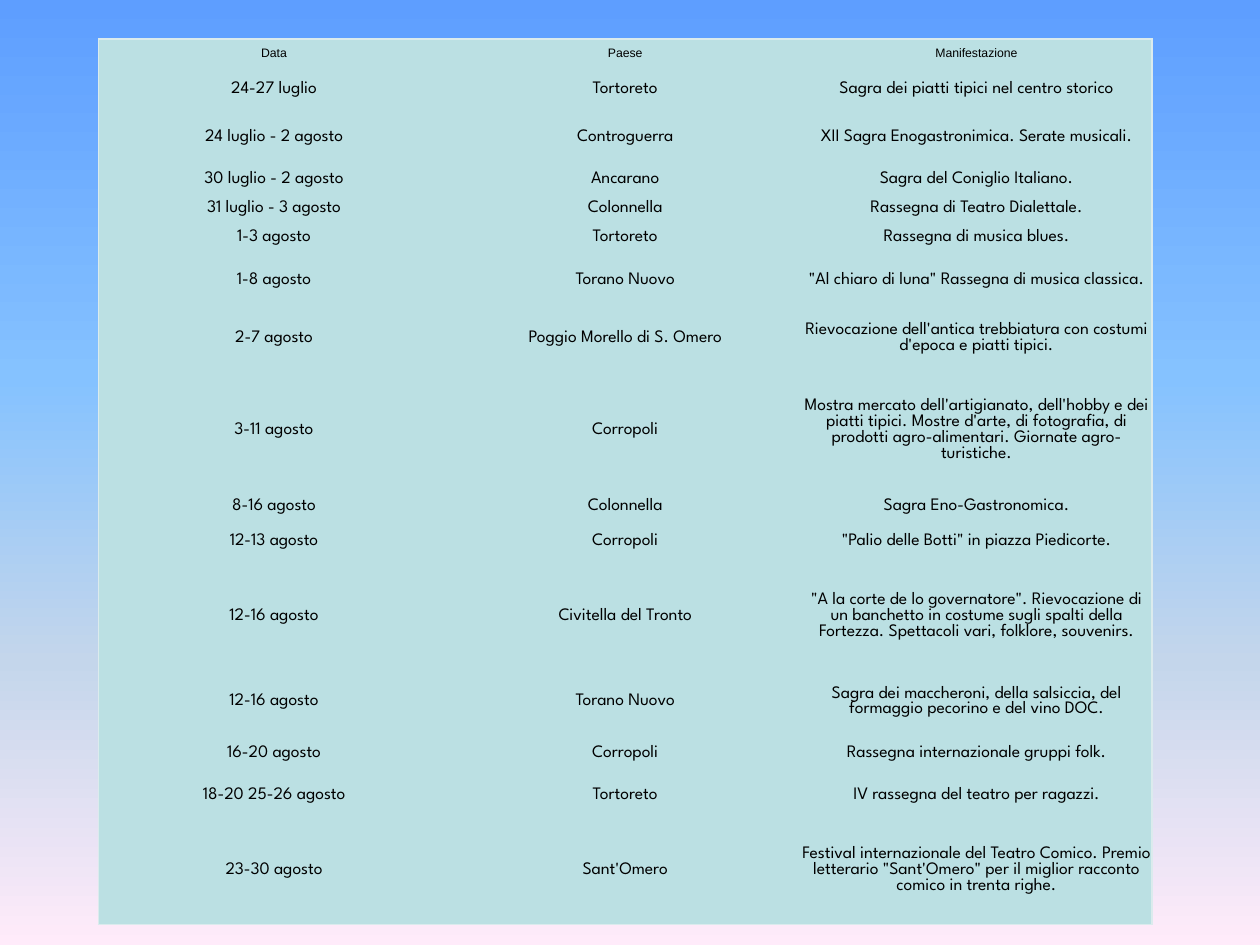
from typing import NamedTuple

import copy
import lxml.etree
import pptx
import pptx.dml.color
import pptx.enum.text
import pptx.oxml.ns
import pptx.table
import pptx.util

qn = pptx.oxml.ns.qn

NO_GRID_STYLE = "{2D5ABB26-0587-4C30-8999-92F81FD0307C}"
CELL_FILL = "BBE0E3"
BORDER = "DBEBED"
INK = "000000"
SKY = [(0, "5E9EFF"), (0.4, "85C2FF"), (0.7, "C4D6EB"), (1, "FFEBFA")]
COLUMN_WIDTH = 200.7
LINE, SHORT, MEDIUM, TALL, TALLER, TALLEST = 16.6, 23.8, 31.7, 35.4, 62, 69.8


class Event(NamedTuple):
    height: float
    date: str
    town: str
    festival: str


HEADER = Event(LINE, "Data", "Paese", "Manifestazione")
EVENTS = [
    Event(SHORT, "24-27 luglio", "Tortoreto", "Sagra dei piatti tipici nel centro storico"),
    Event(MEDIUM, "24 luglio - 2 agosto", "Controguerra", "XII Sagra Enogastronimica. Serate musicali."),
    Event(LINE, "30 luglio - 2 agosto", "Ancarano", "Sagra del Coniglio Italiano."),
    Event(LINE, "31 luglio - 3 agosto", "Colonnella", "Rassegna di Teatro Dialettale."),
    Event(LINE, "1-3 agosto", "Tortoreto", "Rassegna di musica blues."),
    Event(MEDIUM, "1-8 agosto", "Torano Nuovo", '"Al chiaro di luna" Rassegna di musica classica.'),
    Event(TALL, "2-7 agosto", "Poggio Morello di S. Omero",
          "Rievocazione dell'antica trebbiatura con costumi d'epoca e piatti tipici."),
    Event(TALLEST, "3-11 agosto", "Corropoli",
          "Mostra mercato dell'artigianato, dell'hobby e dei piatti tipici. Mostre d'arte, "
          "di fotografia, di prodotti agro-alimentari. Giornate agro-turistiche."),
    Event(LINE, "8-16 agosto", "Colonnella", "Sagra Eno-Gastronomica."),
    Event(SHORT, "12-13 agosto", "Corropoli", '"Palio delle Botti" in piazza Piedicorte.'),
    Event(TALLER, "12-16 agosto", "Civitella del Tronto",
          '"A la corte de lo governatore". Rievocazione di un banchetto in costume sugli '
          "spalti della Fortezza. Spettacoli vari, folklore, souvenirs."),
    Event(TALL, "12-16 agosto", "Torano Nuovo",
          "Sagra dei maccheroni, della salsiccia, del formaggio pecorino e del vino DOC."),
    Event(SHORT, "16-20 agosto", "Corropoli", "Rassegna internazionale gruppi folk."),
    Event(SHORT, "18-20 25-26 agosto", "Tortoreto", "IV rassegna del teatro per ragazzi."),
    Event(TALLER, "23-30 agosto", "Sant'Omero",
          "Festival internazionale del Teatro Comico. Premio letterario \"Sant'Omero\" "
          "per il miglior racconto comico in trenta righe."),
]


def rgb(value: str) -> pptx.dml.color.RGBColor:
    return pptx.dml.color.RGBColor.from_string(value)


def paint_sky(slide) -> None:
    sky = slide.background.fill
    sky.gradient()
    sky.gradient_angle = 270
    stop_list = slide.element.find(".//" + qn("a:gsLst"))
    for _ in SKY[2:]:
        stop_list.append(copy.deepcopy(stop_list[0]))
    for stop, (position, color) in zip(sky.gradient_stops, SKY):
        stop.position = position
        stop.color.rgb = rgb(color)


def write(cell: pptx.table._Cell, text: str, *, font: str, size: float, color: str = INK) -> None:
    paragraph = cell.text_frame.paragraphs[0]
    paragraph.alignment = pptx.enum.text.PP_ALIGN.CENTER
    run = paragraph.add_run()
    run.text = text
    run.font.name = font
    run.font.size = pptx.util.Pt(size)
    run.font.color.rgb = rgb(color)


def format_cell(cell: pptx.table._Cell, edges: list[str]) -> None:
    cell.vertical_anchor = pptx.enum.text.MSO_ANCHOR.MIDDLE
    cell.margin_left = cell.margin_right = pptx.util.Pt(0.75)
    cell.margin_top = cell.margin_bottom = pptx.util.Pt(0.75)
    properties = cell._tc.get_or_add_tcPr()
    for edge in edges:
        line = lxml.etree.SubElement(properties, qn(f"a:ln{edge}"), w=str(pptx.util.Pt(0.75)))
        solid = lxml.etree.SubElement(line, qn("a:solidFill"))
        lxml.etree.SubElement(solid, qn("a:srgbClr"), val=BORDER)
    cell.fill.solid()
    cell.fill.fore_color.rgb = rgb(CELL_FILL)


def outer_edges(row: int, column: int, last_row: int, last_column: int) -> list[str]:
    sides = {"L": column == 0, "R": column == last_column, "T": row == 0, "B": row == last_row}
    return [side for side, is_outer in sides.items() if is_outer]


def add_calendar(slide, events: list[Event]) -> None:
    column_count = len(Event._fields) - 1
    calendar_frame = slide.shapes.add_table(
        len(events), column_count, pptx.util.Pt(56.2), pptx.util.Pt(22.3),
        pptx.util.Pt(COLUMN_WIDTH * column_count),
        pptx.util.Pt(sum(event.height for event in events)))
    calendar = calendar_frame.table
    calendar.first_row = calendar.horz_banding = False
    calendar_frame.element.find(".//" + qn("a:tableStyleId")).text = NO_GRID_STYLE
    for column in calendar.columns:
        column.width = pptx.util.Pt(COLUMN_WIDTH)
    for row, (height, *entries) in enumerate(events):
        calendar.rows[row].height = pptx.util.Pt(height)
        font, size = ("Arial", 7) if row == 0 else ("League Spartan", 10)
        for column, entry in enumerate(entries):
            cell = calendar.cell(row, column)
            format_cell(cell, outer_edges(row, column, len(events) - 1, column_count - 1))
            write(cell, entry, font=font, size=size)


def main() -> None:
    presentation = pptx.Presentation()
    presentation.slide_width = pptx.util.Pt(720)
    presentation.slide_height = pptx.util.Pt(540)
    slide = presentation.slides.add_slide(presentation.slide_layouts[6])
    paint_sky(slide)
    add_calendar(slide, [HEADER, *EVENTS])
    presentation.save("out.pptx")


if __name__ == "__main__":
    main()
